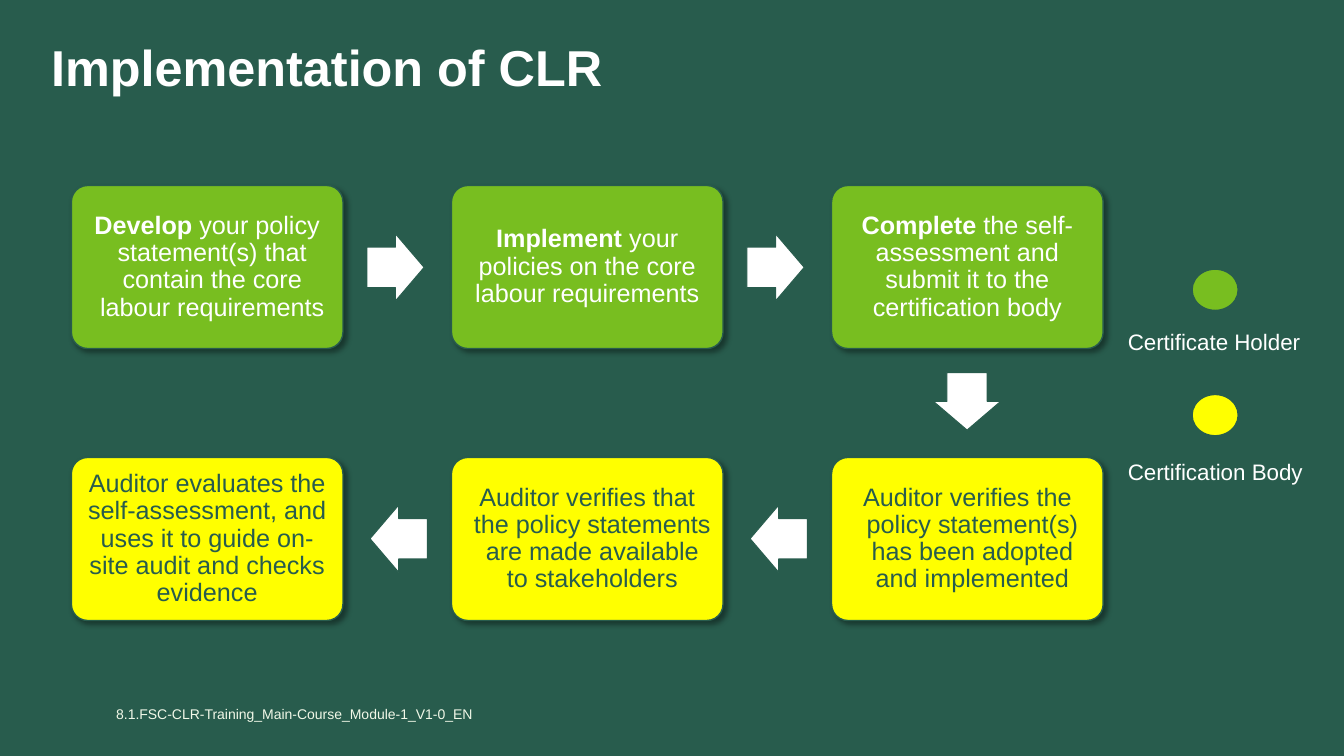
import pptx
import pptx.util
import pptx.dml.color
import pptx.enum.shapes
import pptx.enum.text
import pptx.oxml
import pptx.oxml.ns

Pt = pptx.util.Pt
SHAPES = pptx.enum.shapes.MSO_SHAPE
ALIGN = pptx.enum.text.PP_ALIGN
ANCHOR = pptx.enum.text.MSO_ANCHOR
COLOURS = {"forest": "285C4D", "green": "78BE20", "yellow": "FFFF00",
           "white": "FFFFFF", "pale": "F1F8E8"}
FONT = "Arial"
BOX_WIDTH, BOX_HEIGHT = 194, 116.5
BOX_LEFT, BOX_PITCH = 51, 271.5
ROW_TOPS = (132.5, 326.75)
ARROW_WIDTH, ARROW_HEIGHT = 41, 48
STEPS = [
    (0, 0, "Develop", " your policy statement(s) that contain the core labour requirements", 7.2),
    (0, 1, "Implement", " your policies on the core labour requirements", 0),
    (0, 2, "Complete", " the self-assessment and submit it to the certification body", 0),
    (1, 2, "", "Auditor verifies the policy statement(s) has been adopted and implemented", 7.2),
    (1, 1, "", "Auditor verifies that the policy statements are made available to stakeholders", 7.2),
    (1, 0, "", "Auditor evaluates the self-assessment, and uses it to guide on-site audit "
               "and checks evidence", 0),
]
ARROWS = [(262, 167, 0), (533.5, 167, 0), (670.25, 262.75, 90),
          (535.75, 360.75, 180), (264.25, 360.75, 180)]
LEGEND = [("Certificate Holder", "green", 192.25, 230.5),
          ("Certification Body", "yellow", 281.75, 323.5)]


class FlowSlide:
    """Draws the parts of a process slide in one shared style."""

    def __init__(self, deck):
        self.page = deck.slides.add_slide(deck.slide_layouts[5])
        background = self.page.background.fill
        background.solid()
        background.fore_color.rgb = self.colour("forest")

    def colour(self, name):
        return pptx.dml.color.RGBColor.from_string(COLOURS[name])

    def style(self, font, size, colour, bold=False):
        font.name, font.size, font.bold = FONT, Pt(size), bold
        font.color.rgb = self.colour(colour)

    def frame(self, box, anchor, across=0, down=0):
        frame = box.text_frame
        frame.word_wrap = True
        frame.auto_size = pptx.enum.text.MSO_AUTO_SIZE.NONE
        frame.vertical_anchor = anchor
        frame.margin_left = frame.margin_right = Pt(across)
        frame.margin_top = frame.margin_bottom = Pt(down)
        return frame

    def title(self, text, left, top, width, height):
        box = self.page.shapes.title
        box.left, box.top, box.width, box.height = map(Pt, (left, top, width, height))
        frame = self.frame(box, ANCHOR.TOP)
        frame.text = text
        para = frame.paragraphs[0]
        para.alignment, para.line_spacing = ALIGN.LEFT, 0.8
        self.style(para.runs[0].font, 36, "white", True)

    def label(self, text, left, top, width, height, size, colour, anchor, across=0, down=0):
        box = self.page.shapes.add_textbox(*map(Pt, (left, top, width, height)))
        frame = self.frame(box, anchor, across, down)
        frame.text = text
        self.style(frame.paragraphs[0].runs[0].font, size, colour)

    def shape(self, kind, left, top, width, height, fill, line=1):
        shape = self.page.shapes.add_shape(kind, *map(Pt, (left, top, width, height)))
        shape.shadow.inherit = False
        shape.fill.solid()
        shape.fill.fore_color.rgb = self.colour(fill)
        shape.line.color.rgb = self.colour("forest")
        shape.line.width = Pt(line)
        return shape

    def step(self, row, column, lead, rest, hanging):
        fill, ink = (("green", "white"), ("yellow", "forest"))[row]
        box = self.shape(SHAPES.ROUNDED_RECTANGLE, BOX_LEFT + column * BOX_PITCH,
                         ROW_TOPS[row], BOX_WIDTH, BOX_HEIGHT, fill)
        box.adjustments[0] = 0.1
        self.cast_shadow(box)
        para = self.frame(box, ANCHOR.MIDDLE, 5, 5).paragraphs[0]
        para.alignment, para.line_spacing = ALIGN.CENTER, 0.9
        if hanging:
            properties = para._p.get_or_add_pPr()
            properties.set("marL", str(Pt(hanging)))
            properties.set("indent", str(-Pt(hanging)))
        for text, bold in ((lead, True), (rest, False)):
            if text:
                span = para.add_run()
                span.text = text
                self.style(span.font, 18, ink, bold)

    def cast_shadow(self, shape):
        effects = shape._element.spPr.find(pptx.oxml.ns.qn("a:effectLst"))
        effects.append(pptx.oxml.parse_xml(
            f'<a:outerShdw {pptx.oxml.ns.nsdecls("a")} blurRad="{Pt(4)}" dist="{Pt(3)}" '
            'dir="2700000" algn="tl" rotWithShape="0"><a:srgbClr val="000000">'
            '<a:alpha val="40000"/></a:srgbClr></a:outerShdw>'))

    def arrow(self, left, top, rotation):
        arrow = self.shape(SHAPES.RIGHT_ARROW, left, top, ARROW_WIDTH, ARROW_HEIGHT,
                           "white", 0.75)
        arrow.adjustments[0], arrow.adjustments[1] = 0.6, 0.5
        arrow.rotation = rotation

    def legend(self, text, colour, dot_top, text_top):
        self.shape(SHAPES.OVAL, 851.5, dot_top, 33, 29.5, colour)
        self.label(text, 798.5, text_top, 171.5, 26.5, 16, "white", ANCHOR.TOP, 7.2, 3.6)


def main():
    deck = pptx.Presentation()
    deck.slide_width, deck.slide_height = Pt(960), Pt(540)
    slide = FlowSlide(deck)
    slide.title("Implementation of CLR", 36.5, 34.5, 793.5, 29)
    for step in STEPS:
        slide.step(*step)
    for arrow in ARROWS:
        slide.arrow(*arrow)
    for entry in LEGEND:
        slide.legend(*entry)
    slide.label("8.1.FSC-CLR-Training_Main-Course_Module-1_V1-0_EN",
                83, 495.5, 623, 29, 10, "pale", ANCHOR.MIDDLE)
    deck.save("out.pptx")


if __name__ == "__main__":
    main()
